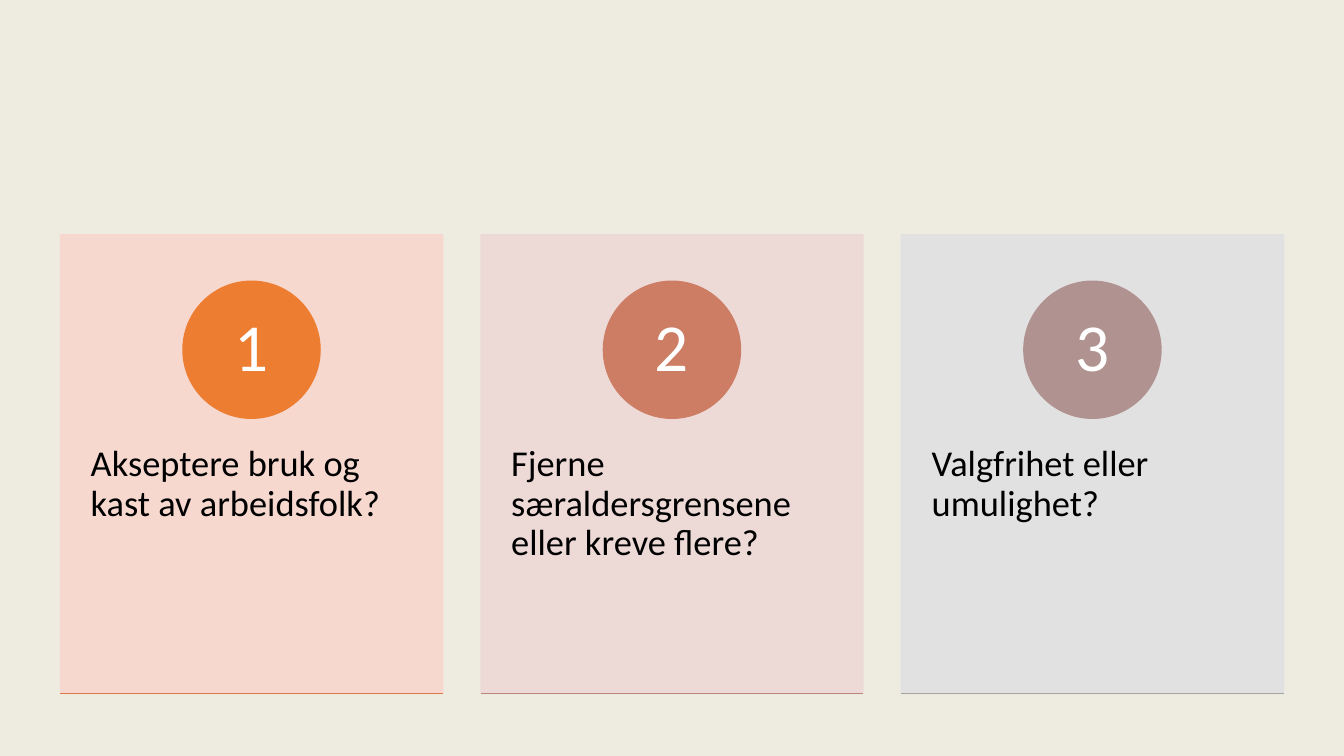
from dataclasses import dataclass

from lxml import etree
from pptx import Presentation
from pptx.dml.color import RGBColor
from pptx.enum.shapes import MSO_CONNECTOR as CONNECTOR, MSO_SHAPE as SHAPE
from pptx.enum.text import MSO_ANCHOR as ANCHOR, PP_ALIGN as ALIGN
from pptx.oxml.ns import qn
from pptx.shapes.autoshape import Shape
from pptx.slide import Slide
from pptx.util import Inches, Pt

FONT = "Calibri"
LEFT, TOP, PITCH = 0.6, 2.33, 4.17
CARD_W, CARD_H = 3.79, 4.55
TEXT_TOP, TEXT_H = 4.06, 2.73
CIRCLE_TOP, CIRCLE_D = 2.79, 1.36


@dataclass
class Card:
    text: str
    fill: str
    circle: str
    rule: str


CARDS = [
    Card("Akseptere bruk og kast av arbeidsfolk?", "F8D7CE", "ED7D31", "DC7A4B"),
    Card("Fjerne særaldersgrensene eller kreve flere?", "EDD9D7", "CC7D64", "BD867B"),
    Card("Valgfrihet eller umulighet?", "E1E1E1", "B09391", "A5A5A5"),
]


def paint(fmt, color: str, opacity: int = 100) -> None:
    fmt.solid()
    fmt.fore_color.rgb = RGBColor.from_string(color)
    if opacity < 100:
        clr = fmt._xPr.find(qn("a:solidFill"))[0]
        etree.SubElement(clr, qn("a:alpha")).set("val", str(opacity * 1000))


def add_block(s: Slide, kind: SHAPE, x: float, y: float, w: float, h: float,
              color: str, opacity: int = 100) -> Shape:
    sp = s.shapes.add_shape(kind, Inches(x), Inches(y), Inches(w), Inches(h))
    sp.shadow.inherit = False
    paint(sp.fill, color, opacity)
    paint(sp.line.fill, color, opacity)
    sp.line.width = Pt(1)
    return sp


def write(sp: Shape, text: str, size: int, color: str, align: ALIGN,
          anchor: ANCHOR, inset_x: float, inset_y: float) -> None:
    tf = sp.text_frame
    tf.word_wrap = True
    tf.vertical_anchor = anchor
    tf.margin_left = tf.margin_right = Inches(inset_x)
    tf.margin_top = tf.margin_bottom = Inches(inset_y)
    tf.text = text
    p = tf.paragraphs[0]
    p.alignment = align
    p.line_spacing = 0.9
    r = p.runs[0]
    r.font.name = FONT
    r.font.size = Pt(size)
    paint(r.font.fill, color)


def add_rule(s: Slide, x: float, y: float, w: float, color: str) -> None:
    rule = s.shapes.add_connector(CONNECTOR.STRAIGHT, Inches(x), Inches(y),
                                  Inches(x + w), Inches(y))
    paint(rule.line.fill, color)
    rule.line.width = Pt(1)
    etree.SubElement(rule._element.spPr, qn("a:effectLst"))


def add_card(s: Slide, index: int, card: Card) -> None:
    x = LEFT + index * PITCH
    add_block(s, SHAPE.RECTANGLE, x, TOP, CARD_W, CARD_H, card.fill, 90)
    body = s.shapes.add_textbox(Inches(x), Inches(TEXT_TOP),
                                Inches(CARD_W), Inches(TEXT_H))
    write(body, card.text, 26, "000000", ALIGN.LEFT, ANCHOR.TOP, 0.3, 0.36)
    circle = add_block(s, SHAPE.OVAL, x + (CARD_W - CIRCLE_D) / 2, CIRCLE_TOP,
                       CIRCLE_D, CIRCLE_D, card.circle)
    write(circle, str(index + 1), 48, "FFFFFF", ALIGN.CENTER, ANCHOR.MIDDLE, 0.11, 0.01)
    add_rule(s, x, TOP + CARD_H, CARD_W, card.rule)


def main() -> None:
    prs = Presentation()
    prs.slide_width, prs.slide_height = Inches(13.33), Inches(7.5)
    s = prs.slides.add_slide(prs.slide_layouts[6])
    paint(s.background.fill, "EEEBE1")
    for index, card in enumerate(CARDS):
        add_card(s, index, card)
    prs.save("out.pptx")


if __name__ == "__main__":
    main()
